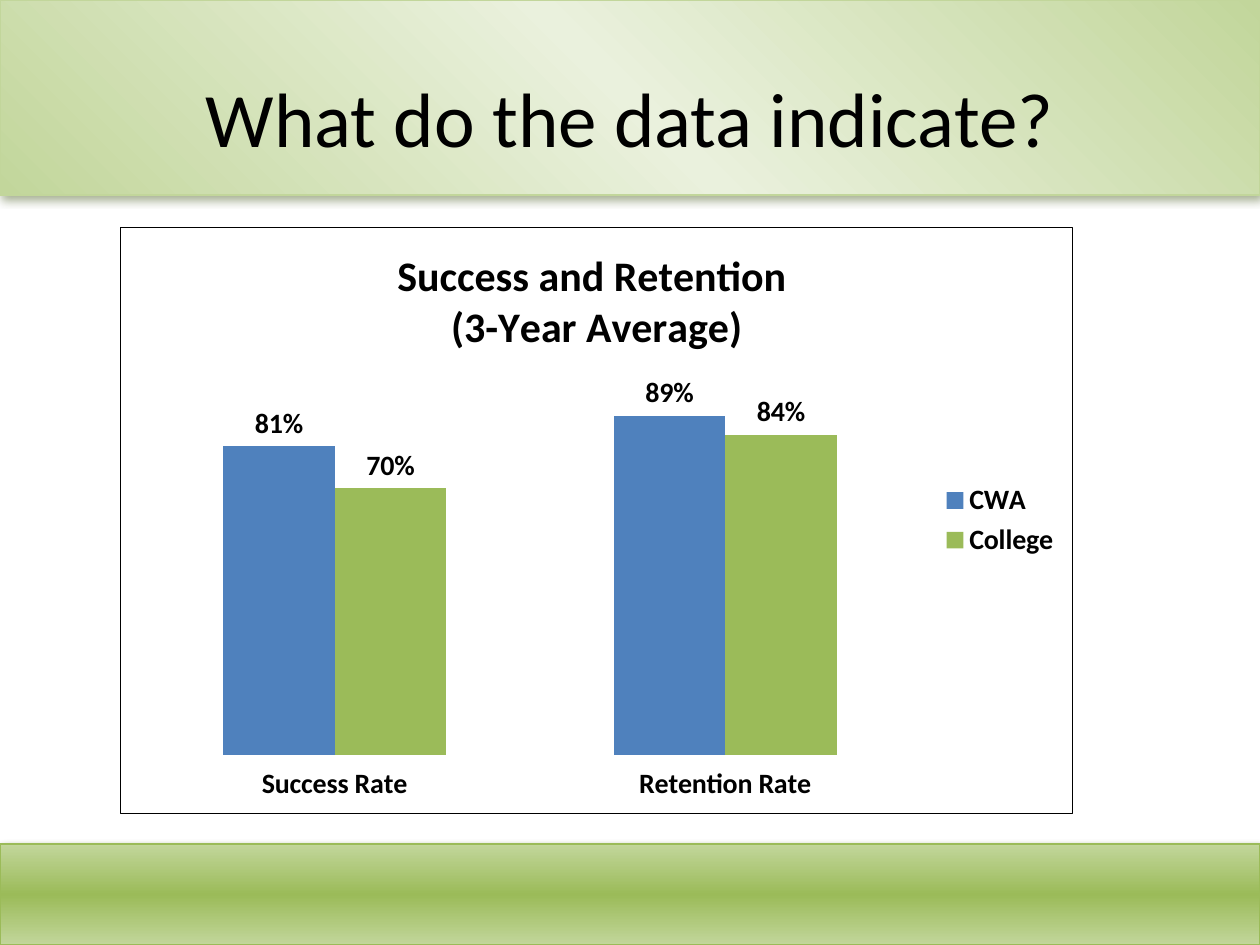
from lxml.etree import fromstring
from pptx import Presentation
from pptx.chart.data import CategoryChartData as Data
from pptx.dml.color import RGBColor as Rgb
from pptx.enum.chart import XL_CHART_TYPE as Kind, XL_LABEL_POSITION as Spot
from pptx.enum.chart import XL_LEGEND_POSITION as Side, XL_TICK_LABEL_POSITION as Tick
from pptx.enum.shapes import MSO_SHAPE as Form
from pptx.enum.text import MSO_ANCHOR as Anchor, PP_ALIGN as Align
from pptx.util import Inches, Pt

NS = ('xmlns:a="http://schemas.openxmlformats.org/drawingml/2006/main" '
      'xmlns:c="http://schemas.openxmlformats.org/drawingml/2006/chart"')


def hue(code):
    return Rgb.from_string(code)


def put(item, form):
    for key, value in form.items():
        setattr(item, key, value)


class Deck:
    """Holds the style and the current slide, on a grid of 20 columns by 15 rows."""

    face = "Calibri"
    ink = "000000"
    cell = 0.5
    bold = {"size": Pt(16), "bold": True}

    def __init__(self):
        self.show = Presentation()
        put(self.show, {"slide_width": Inches(20 * self.cell),
                        "slide_height": Inches(15 * self.cell)})
        self.slide = self.show.slides.add_slide(self.show.slide_layouts[5])

    def grid(self, *spans):
        return [Inches(span * self.cell) for span in spans]

    def type(self, font, form):
        put(font, {"name": self.face, **form})
        font.color.rgb = hue(self.ink)

    def band(self, box, edge, mid, line, angle, alpha):
        bar = self.slide.shapes.add_shape(Form.RECTANGLE, *self.grid(*box))
        bar.line.color.rgb = hue(line)
        bar.line.width = Pt(1)
        stops = "".join(
            f'<a:gs pos="{pos * 1000}"><a:srgbClr val="{code}"/></a:gs>'
            for pos, code in ((0, edge), (50, mid), (100, edge)))
        fill = fromstring(f'<a:gradFill {NS} rotWithShape="0"><a:gsLst>{stops}</a:gsLst>'
                          f'<a:lin ang="{angle * 60000}" scaled="0"/></a:gradFill>')
        shade = fromstring(
            f'<a:effectLst {NS}><a:outerShdw blurRad="{Pt(5)}" dist="{Pt(2.3)}" '
            f'dir="{65 * 60000}" algn="ctr" rotWithShape="0"><a:srgbClr val="4E6128">'
            f'<a:alpha val="{alpha * 1000}"/></a:srgbClr></a:outerShdw></a:effectLst>')
        rim = bar.line._get_or_add_ln()
        rim.addprevious(fill)
        rim.addnext(shade)

    def title(self, text, box):
        head = self.slide.shapes.title
        put(head, dict(zip(("left", "top", "width", "height"), self.grid(*box))))
        put(head.text_frame, {"text": text, "vertical_anchor": Anchor.MIDDLE,
                              "word_wrap": True})
        line = head.text_frame.paragraphs[0]
        line.alignment = Align.CENTER
        self.type(line.runs[0].font, {"size": Pt(44)})
        self.slide.shapes._spTree.append(head._element)

    def chart(self, box, name, cats, rows):
        data = Data(number_format="0%")
        data.categories = cats
        for label, values, _ in rows:
            data.add_series(label, values)
        chart = self.slide.shapes.add_chart(
            Kind.COLUMN_CLUSTERED, *self.grid(*box), data).chart
        self.type(chart.font, {"size": Pt(10)})
        chart.chart_title.text_frame.text = name
        for line in chart.chart_title.text_frame.paragraphs:
            self.type(line.runs[0].font, {"size": Pt(24), "bold": True})
        chart.has_legend = True
        put(chart.legend, {"position": Side.RIGHT, "include_in_layout": False})
        self.type(chart.legend.font, self.bold)
        put(chart.value_axis, {"visible": False, "has_major_gridlines": False,
                               "minimum_scale": 0, "maximum_scale": 1})
        axis = chart.category_axis
        axis.tick_label_position = Tick.LOW
        axis.format.line.fill.background()
        self.type(axis.tick_labels.font, self.bold)
        plot = chart.plots[0]
        put(plot, {"gap_width": 150, "overlap": 0, "vary_by_categories": False})
        for series, (_, _, code) in zip(plot.series, rows):
            series.format.fill.solid()
            series.format.fill.fore_color.rgb = hue(code)
            tags = series.data_labels
            put(tags, {"show_value": True, "number_format": "0%",
                       "number_format_is_linked": False, "position": Spot.OUTSIDE_END})
            self.type(tags.font, self.bold)
        self.frame(chart)

    def frame(self, chart):
        root = chart._chartSpace.chart
        root.addnext(fromstring(
            f'<c:spPr {NS}><a:solidFill><a:srgbClr val="FFFFFF"/></a:solidFill>'
            f'<a:ln w="{Pt(0.75)}"><a:solidFill><a:srgbClr val="{self.ink}"/>'
            '</a:solidFill></a:ln></c:spPr>'))
        area = root.plotArea
        for old in area.findall("{*}layout"):
            area.remove(old)
        sides = "".join(f'<c:{key} val="{value}"/>' for key, value in (
            ("layoutTarget", "inner"), ("xMode", "edge"), ("yMode", "edge"),
            ("x", 0.02), ("y", 0.25), ("w", 0.82), ("h", 0.65)))
        area.insert(0, fromstring(
            f'<c:layout {NS}><c:manualLayout>{sides}</c:manualLayout></c:layout>'))


def main():
    deck = Deck()
    deck.band((0, 13.4, 20, 1.6), "C2D69B", "9BBB59", "9BBB59", 90, 75)
    deck.band((0, 0, 20, 3.1), "C2D69B", "EAF1DD", "C2D69B", 315, 50)
    deck.title("What do the data indicate?", (1, 0.6, 18, 2.5))
    deck.chart((1.9, 3.6, 15.14, 9.32), "Success and Retention \n(3-Year Average)",
               ("Success Rate", "Retention Rate"),
               (("CWA", (0.81, 0.89), "4F81BD"), ("College", (0.7, 0.84), "9BBB59")))
    deck.show.save("out.pptx")


if __name__ == "__main__":
    main()
